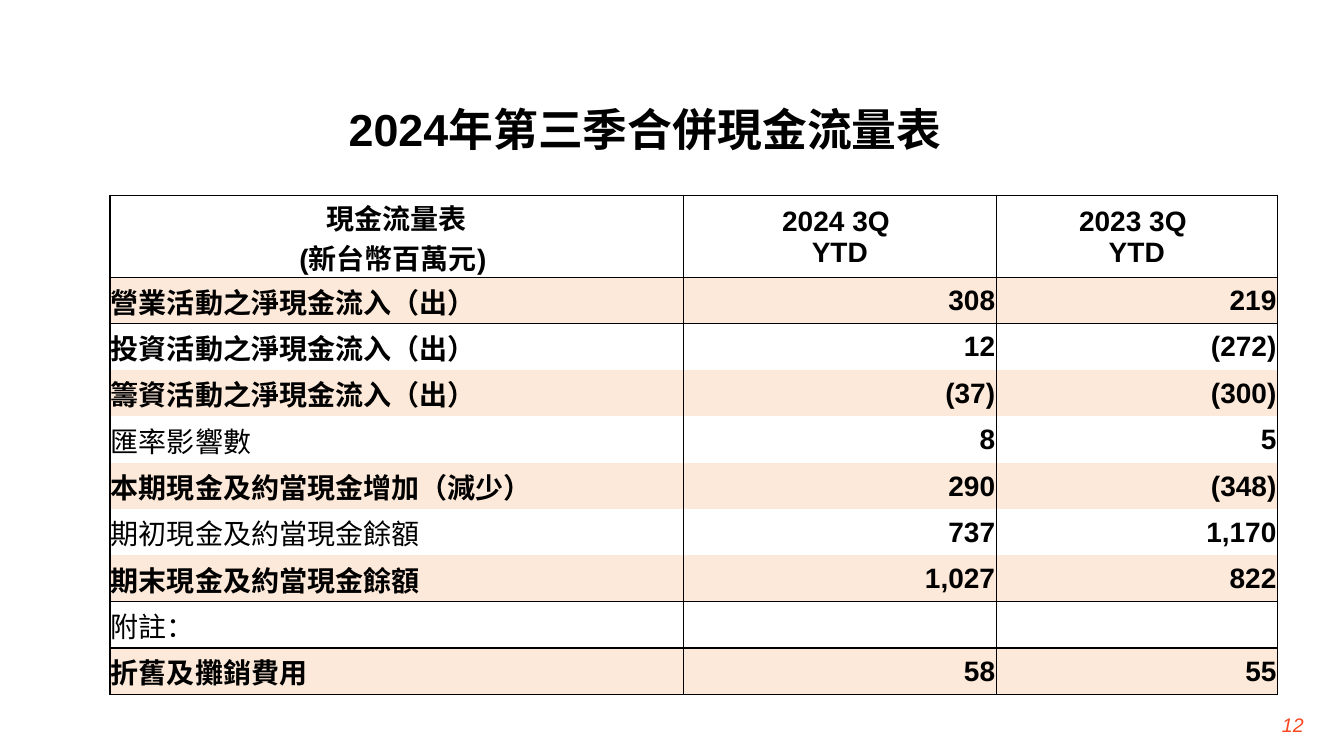
from dataclasses import dataclass

from lxml import etree
from pptx import Presentation
from pptx.dml.color import RGBColor
from pptx.enum.text import MSO_ANCHOR, PP_ALIGN
from pptx.oxml import parse_xml
from pptx.oxml.ns import nsdecls, qn
from pptx.util import Inches, Pt

LEFT, CENTER, RIGHT = PP_ALIGN.LEFT, PP_ALIGN.CENTER, PP_ALIGN.RIGHT
MIDDLE = MSO_ANCHOR.MIDDLE
NO_STYLE = "{2D5ABB26-0587-4C30-8999-92F81FD0307C}"

TITLE = "2024年第三季合併現金流量表"
PAGE = "12"
HEADER = ("現金流量表\v(新台幣百萬元) ", "2024 3Q \vYTD", "2023 3Q \vYTD")
# label, 2024, 2023, bold label
ROWS = [
    ("營業活動之淨現金流入（出）", "308", "219", True),
    ("投資活動之淨現金流入（出）", "12", "(272)", True),
    ("籌資活動之淨現金流入（出）", "(37)", "(300)", True),
    ("匯率影響數", "8", "5", False),
    ("本期現金及約當現金增加（減少）", "290", "(348)", True),
    ("期初現金及約當現金餘額", "737", "1,170", False),
    ("期末現金及約當現金餘額", "1,027", "822", True),
    ("附註：", "", "", False),
    ("折舊及攤銷費用", "58", "55", True),
]
COLUMN_WIDTHS = (5.69, 3.1, 2.79)
HEADER_HEIGHT, ROW_HEIGHT = 0.81, 0.46
RULED_COLUMN_EDGES = {0, 1, 3}
RULED_ROW_EDGES = {0, 1, 8, 10}


@dataclass(frozen=True)
class Theme:
    ink: str = "000000"
    paper: str = "FFFFFF"
    band: str = "FDE9D9"
    accent: str = "FA461E"
    latin: str = "Arial"
    cjk: str = "Noto Sans CJK TC"
    title: int = 32
    body: int = 20
    page: int = 14


THEME = Theme()


def style(p, size, align, bold=False, italic=False, color=THEME.ink, name=THEME.latin):
    p.alignment = align
    f = p.font
    f.size, f.bold, f.italic, f.name = Pt(size), bold, italic, name
    f.color.rgb = RGBColor.from_string(color)
    east_asian = etree.Element(qn("a:ea"), typeface=THEME.cjk)
    p._p.pPr.find(qn("a:defRPr")).find(qn("a:latin")).addnext(east_asian)


def rule_cell(cell, row, col):
    """Draw the sides of a cell that lie on a ruled edge of the grid."""
    sides = {
        "lnL": col in RULED_COLUMN_EDGES,
        "lnR": col + 1 in RULED_COLUMN_EDGES,
        "lnT": row in RULED_ROW_EDGES,
        "lnB": row + 1 in RULED_ROW_EDGES,
    }
    tc_pr = cell._tc.get_or_add_tcPr()
    for tag, ruled in sides.items():
        if ruled:
            tc_pr.append(parse_xml(
                f'<a:{tag} {nsdecls("a")} w="{Pt(1)}"><a:solidFill>'
                f'<a:srgbClr val="{THEME.ink}"/></a:solidFill></a:{tag}>'))


def add_title(s):
    sp = s.shapes.title
    sp.left, sp.top, sp.width, sp.height = map(Inches, (3.25, 0.99, 6.3, 0.58))
    sp.fill.solid()
    sp.fill.fore_color.rgb = RGBColor.from_string(THEME.paper)
    tf = sp.text_frame
    tf.text = TITLE
    tf.vertical_anchor = MIDDLE
    style(tf.paragraphs[0], THEME.title, CENTER, bold=True)


def add_page_number(s):
    sp = s.shapes.add_textbox(*map(Inches, (12.28, 7.02, 0.75, 0.4)))
    tf = sp.text_frame
    tf.word_wrap = True
    tf.text = PAGE
    style(tf.paragraphs[0], THEME.page, RIGHT, italic=True, color=THEME.accent)


def add_cash_flow_table(s):
    lines = [(*HEADER, True), *ROWS]
    height = HEADER_HEIGHT + ROW_HEIGHT * len(ROWS)
    frame = s.shapes.add_table(
        len(lines), len(COLUMN_WIDTHS),
        *map(Inches, (1.09, 1.94, sum(COLUMN_WIDTHS), height)))
    table = frame.table
    table.first_row = table.horz_banding = False
    table._tbl.tblPr.find(qn("a:tableStyleId")).text = NO_STYLE
    for column, width in zip(table.columns, COLUMN_WIDTHS):
        column.width = Inches(width)
    for i, (*texts, bold_label) in enumerate(lines):
        table.rows[i].height = Inches(ROW_HEIGHT if i else HEADER_HEIGHT)
        for j, text in enumerate(texts):
            cell = table.cell(i, j)
            cell.margin_left = cell.margin_right = cell.margin_top = Inches(0.01)
            cell.margin_bottom = 0
            cell.vertical_anchor = MIDDLE
            rule_cell(cell, i, j)
            if i % 2:
                cell.fill.solid()
                cell.fill.fore_color.rgb = RGBColor.from_string(THEME.band)
            else:
                cell.fill.background()
            if text:
                is_label = i > 0 and j == 0
                cell.text = text
                style(cell.text_frame.paragraphs[0], THEME.body,
                      CENTER if i == 0 else LEFT if is_label else RIGHT,
                      bold=bold_label if is_label else True,
                      name=THEME.cjk if is_label else THEME.latin)


def main():
    prs = Presentation()
    prs.slide_width, prs.slide_height = Inches(13.33), Inches(7.5)
    s = prs.slides.add_slide(prs.slide_layouts[5])
    add_title(s)
    add_page_number(s)
    add_cash_flow_table(s)
    prs.save("out.pptx")


if __name__ == "__main__":
    main()
